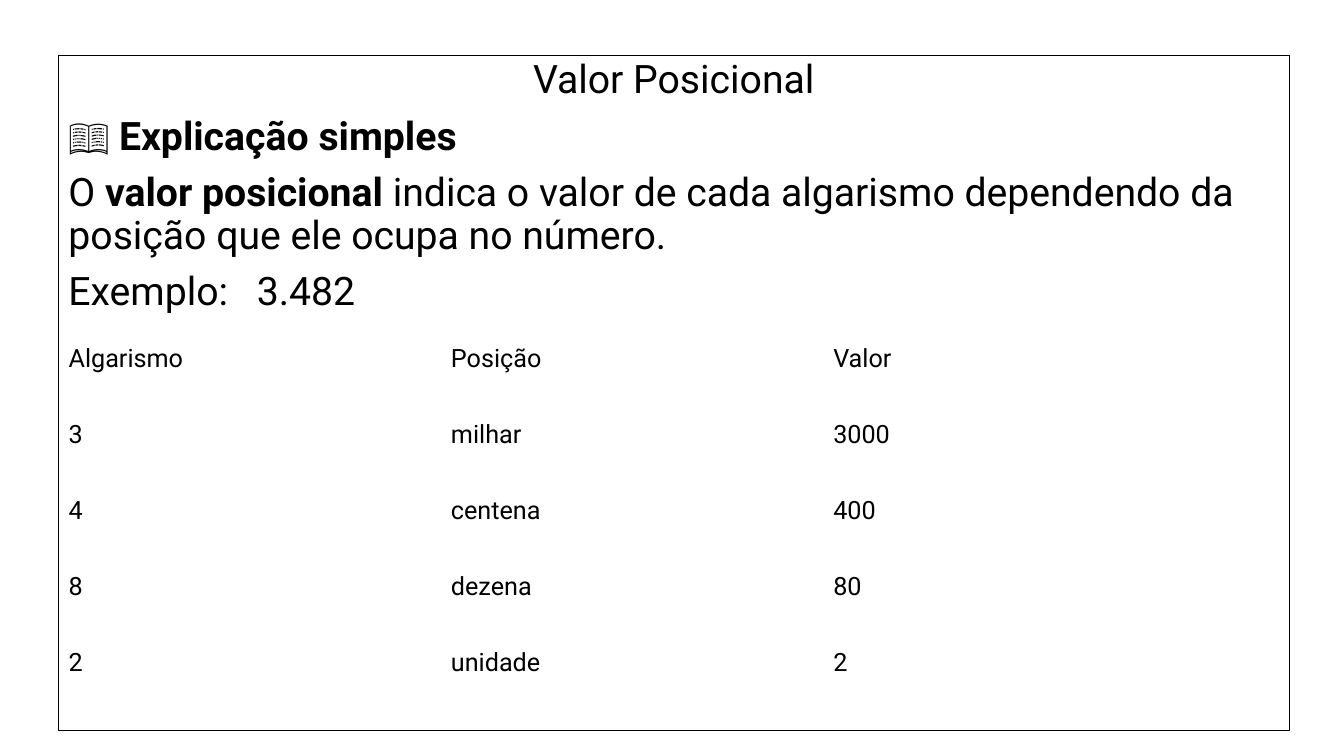
from lxml import etree
from pptx import Presentation
from pptx.dml.color import RGBColor
from pptx.enum.shapes import MSO_SHAPE
from pptx.enum.text import MSO_ANCHOR, PP_ALIGN
from pptx.oxml.ns import qn
from pptx.util import Pt

BLACK = RGBColor(0, 0, 0)
WHITE = RGBColor(255, 255, 255)
RECTANGLE = MSO_SHAPE.RECTANGLE
TOP, MIDDLE = MSO_ANCHOR.TOP, MSO_ANCHOR.MIDDLE
LEFT, CENTER = PP_ALIGN.LEFT, PP_ALIGN.CENTER
NO_STYLE_NO_GRID = "{2D5ABB26-0587-4C30-8999-92F81FD0307C}"

EXPLANATION = [
    ([("Valor Posicional", False)], {"align": CENTER}),
    ([("📖 Explicação simples", True)], {"before": 10}),
    ([("O ", False), ("valor posicional", True),
      (" indica o valor de cada algarismo dependendo da posição "
       "que ele ocupa no número.", False)], {"before": 10}),
    ([("Exemplo:\t3.482", False)], {"before": 10, "tab": 134.6}),
]
PLACE_VALUES = [
    ("Algarismo", "Posição", "Valor"),
    ("3", "milhar", "3000"),
    ("4", "centena", "400"),
    ("8", "dezena", "80"),
    ("2", "unidade", "2"),
]


def write(p, runs, size, font, align=LEFT, spacing=None, before=0, tab=None):
    """Fill a paragraph with (text, bold) runs; tab is a stop in points."""
    p.alignment = align
    p.space_before = Pt(before)
    if spacing:
        p.line_spacing = spacing
    if tab:
        tabs = etree.SubElement(p._p.get_or_add_pPr(), qn("a:tabLst"))
        etree.SubElement(tabs, qn("a:tab"), pos=str(Pt(tab)), algn="l")
    for text, bold in runs:
        r = p.add_run()
        r.text = text
        r.font.name = font
        r.font.size = Pt(size)
        r.font.bold = bold
        r.font.color.rgb = BLACK


class SlideBuilder:
    font = "Roboto"
    body_size = 28
    table_size = 18

    def __init__(self, prs):
        self.s = prs.slides.add_slide(prs.slide_layouts[6])
        self.s.background.fill.solid()
        self.s.background.fill.fore_color.rgb = WHITE

    def framed_text(self, left, top, width, height, paragraphs):
        sp = self.s.shapes.add_shape(RECTANGLE, Pt(left), Pt(top), Pt(width), Pt(height))
        sp.shadow.inherit = False
        sp.fill.background()
        sp.line.color.rgb = BLACK
        sp.line.width = Pt(0.75)
        tf = sp.text_frame
        tf.word_wrap = True
        tf.vertical_anchor = TOP
        for i, (runs, style) in enumerate(paragraphs):
            p = tf.add_paragraph() if i else tf.paragraphs[0]
            write(p, runs, self.body_size, self.font, spacing=0.9, **style)

    def table(self, left, top, col_width, row_height, rows):
        n_rows, n_cols = len(rows), len(rows[0])
        table = self.s.shapes.add_table(
            n_rows, n_cols, Pt(left), Pt(top),
            Pt(col_width * n_cols), Pt(row_height * n_rows)).table
        table.first_row = table.horz_banding = False
        table._tbl.tblPr.find(qn("a:tableStyleId")).text = NO_STYLE_NO_GRID
        for column in table.columns:
            column.width = Pt(col_width)
        for row, values in zip(table.rows, rows):
            row.height = Pt(row_height)
            for cell, value in zip(row.cells, values):
                cell.fill.background()
                cell.vertical_anchor = MIDDLE
                write(cell.text_frame.paragraphs[0], [(value, False)],
                      self.table_size, self.font)


def main():
    prs = Presentation()
    prs.slide_width, prs.slide_height = Pt(960), Pt(540)
    slide = SlideBuilder(prs)
    slide.framed_text(41.8, 39.4, 879, 482.4, EXPLANATION)
    slide.table(41.8, 229, 273.1, 54.3, PLACE_VALUES)
    prs.save("out.pptx")


if __name__ == "__main__":
    main()
